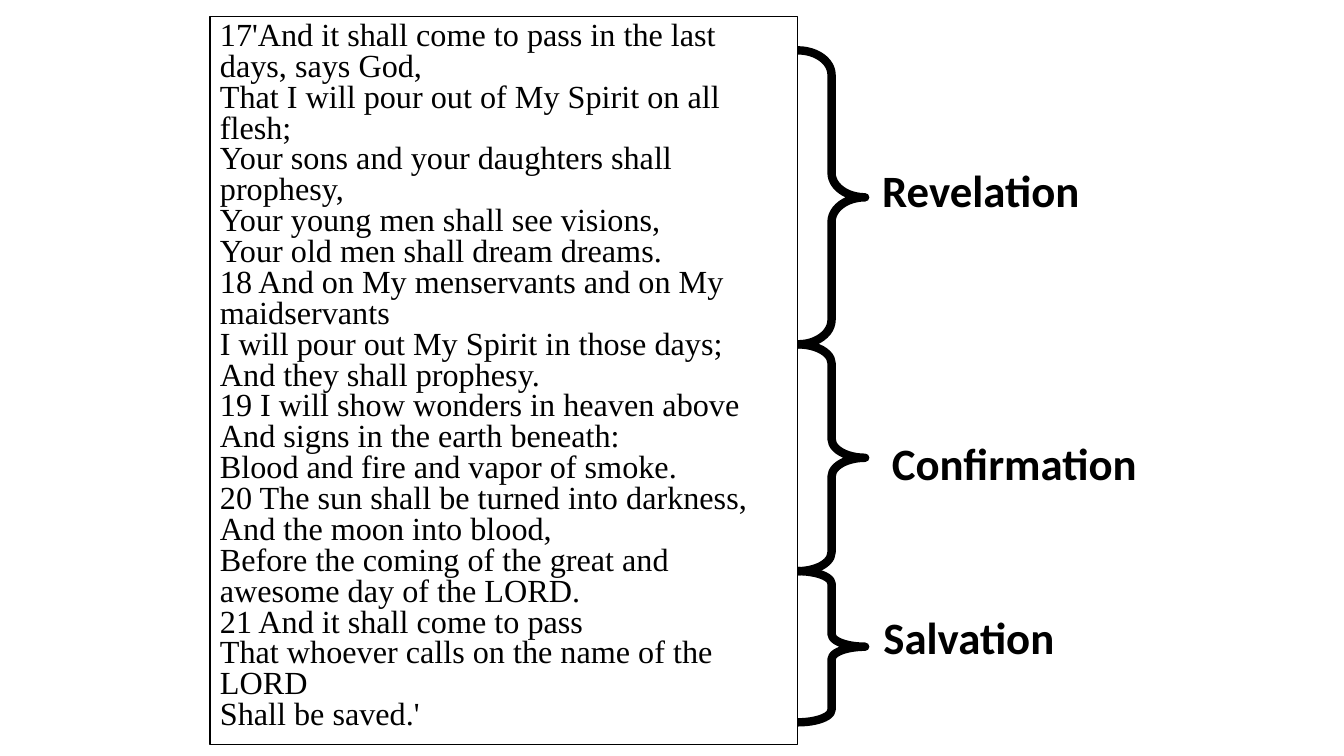
import pptx
import pptx.util
import pptx.dml.color
import pptx.enum.shapes
import pptx.enum.text
from pptx.util import Pt

COLORS = {"ink": "000000", "paper": "FFFFFF"}
VERSES = [
    "17'And it shall come to pass in the last days, says God,",
    "That I will pour out of My Spirit on all flesh;",
    "Your sons and your daughters shall prophesy,",
    "Your young men shall see visions,",
    "Your old men shall dream dreams.",
    "18 And on My menservants and on My maidservants",
    "I will pour out My Spirit in those days;",
    "And they shall prophesy.",
    "19 I will show wonders in heaven above",
    "And signs in the earth beneath:",
    "Blood and fire and vapor of smoke.",
    "20 The sun shall be turned into darkness,",
    "And the moon into blood,",
    "Before the coming of the great and awesome day of the LORD.",
    "21 And it shall come to pass",
    "That whoever calls on the name of the LORD",
    "Shall be saved.'",
]
PASSAGE_BOX = (150, 12, 420, 520)
BRACE_LEFT, BRACE_TOP, BRACE_WIDTH = 570, 36, 48
BRACE_CURL = 17.5
THEMES = [
    {"label": "Revelation", "span": 210, "label_box": (623, 113, 157, 46)},
    {"label": "Confirmation", "span": 162, "label_box": (630, 307.5, 191.5, 46)},
    {"label": "Salvation", "span": 108, "label_box": (624, 432, 138, 46)},
]


def color(name):
    return pptx.dml.color.RGBColor.from_string(COLORS[name])


def add_outlined(slide, preset, box, line_width):
    shape = slide.shapes.add_shape(preset, *map(Pt, box))
    shape.shadow.inherit = False
    shape.line.color.rgb = color("ink")
    shape.line.width = Pt(line_width)
    return shape


def style(paragraph, font_name, size, bold=False):
    paragraph.alignment = pptx.enum.text.PP_ALIGN.LEFT
    for run in paragraph.runs:
        run.font.name = font_name
        run.font.size = Pt(size)
        run.font.bold = bold
        run.font.color.rgb = color("ink")


def add_passage(slide):
    passage = add_outlined(slide, pptx.enum.shapes.MSO_SHAPE.RECTANGLE, PASSAGE_BOX, 0.75)
    passage.fill.solid()
    passage.fill.fore_color.rgb = color("paper")
    frame = passage.text_frame
    frame.word_wrap = True
    frame.auto_size = pptx.enum.text.MSO_AUTO_SIZE.SHAPE_TO_FIT_TEXT
    frame.vertical_anchor = pptx.enum.text.MSO_ANCHOR.TOP
    frame.text = "\n".join(VERSES)
    for verse in frame.paragraphs:
        verse.line_spacing = 0.8
        style(verse, "Times New Roman", 23)


def add_theme(slide, theme, top):
    box = (BRACE_LEFT, top, BRACE_WIDTH, theme["span"])
    brace = add_outlined(slide, pptx.enum.shapes.MSO_SHAPE.RIGHT_BRACE, box, 6)
    brace.fill.background()
    brace.adjustments[0] = BRACE_CURL / BRACE_WIDTH * theme["span"] / THEMES[0]["span"]
    brace.adjustments[1] = 0.5
    label = slide.shapes.add_textbox(*map(Pt, theme["label_box"]))
    frame = label.text_frame
    frame.word_wrap = False
    frame.auto_size = pptx.enum.text.MSO_AUTO_SIZE.SHAPE_TO_FIT_TEXT
    frame.text = theme["label"]
    style(frame.paragraphs[0], "Calibri", 32, bold=True)


def main():
    deck = pptx.Presentation()
    deck.slide_width, deck.slide_height = Pt(960), Pt(540)
    slide = deck.slides.add_slide(deck.slide_layouts[6])
    add_passage(slide)
    top = BRACE_TOP
    for theme in THEMES:
        add_theme(slide, theme, top)
        top += theme["span"]
    deck.save("out.pptx")


if __name__ == "__main__":
    main()
